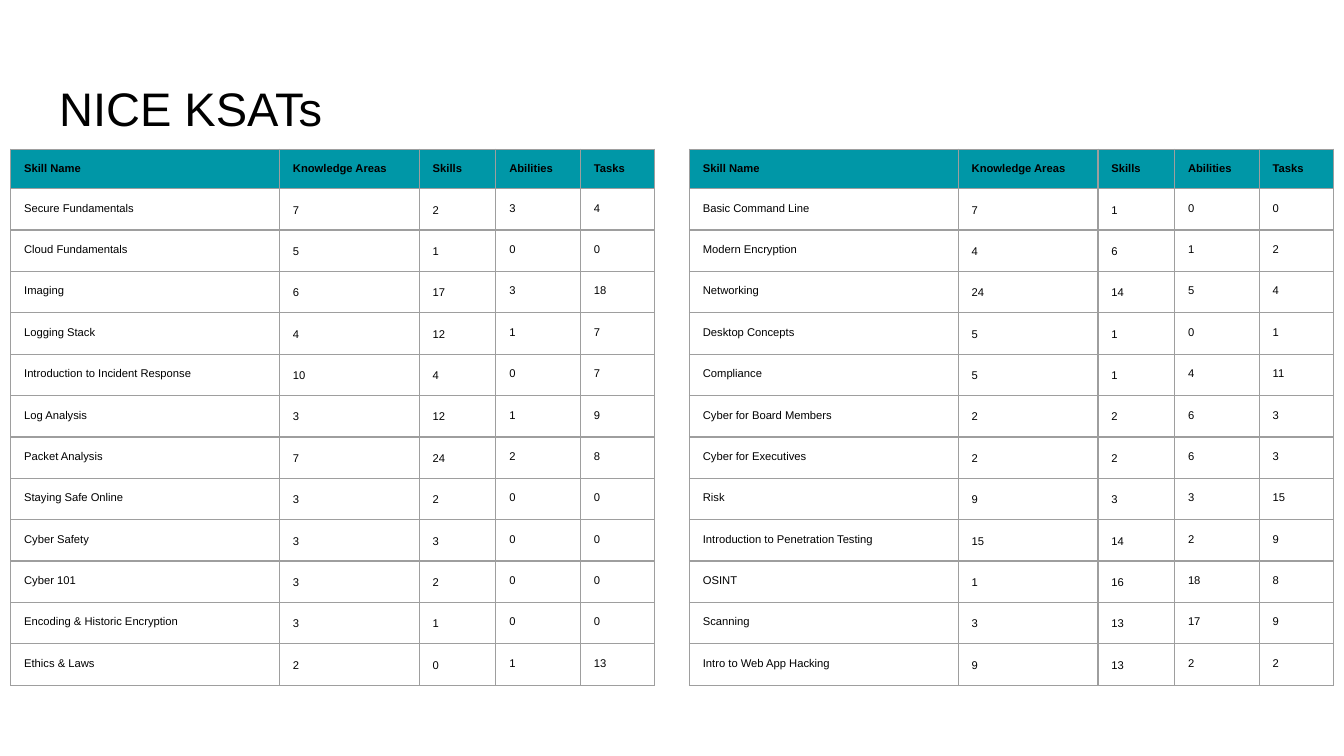
from lxml import etree
from pptx import Presentation
from pptx import util as u
from pptx.dml.color import RGBColor
from pptx.enum import text
from pptx.oxml.ns import qn

COLORS = {"ink": "000000", "header": "0097A7", "border": "9E9E9E"}
FONT = "Arial"

HEADINGS = ["Skill Name", "Knowledge Areas", "Skills", "Abilities", "Tasks"]
COLUMN_WIDTHS = [2, 1.04, 0.57, 0.63, 0.55]
ROW_HEIGHT = 0.23
TABLE_TOP = 1.11

LEFT_SKILLS = [
    ("Secure Fundamentals", 7, 2, 3, 4),
    ("Cloud Fundamentals", 5, 1, 0, 0),
    ("Imaging", 6, 17, 3, 18),
    ("Logging Stack", 4, 12, 1, 7),
    ("Introduction to Incident Response", 10, 4, 0, 7),
    ("Log Analysis", 3, 12, 1, 9),
    ("Packet Analysis", 7, 24, 2, 8),
    ("Staying Safe Online", 3, 2, 0, 0),
    ("Cyber Safety", 3, 3, 0, 0),
    ("Cyber 101", 3, 2, 0, 0),
    ("Encoding & Historic Encryption", 3, 1, 0, 0),
    ("Ethics & Laws", 2, 0, 1, 13),
]
RIGHT_SKILLS = [
    ("Basic Command Line", 7, 1, 0, 0),
    ("Modern Encryption", 4, 6, 1, 2),
    ("Networking", 24, 14, 5, 4),
    ("Desktop Concepts", 5, 1, 0, 1),
    ("Compliance", 5, 1, 4, 11),
    ("Cyber for Board Members", 2, 2, 6, 3),
    ("Cyber for Executives", 2, 2, 6, 3),
    ("Risk", 9, 3, 3, 15),
    ("Introduction to Penetration Testing", 15, 14, 2, 9),
    ("OSINT", 1, 16, 18, 8),
    ("Scanning", 3, 13, 17, 9),
    ("Intro to Web App Hacking", 9, 13, 2, 2),
]


def write(frame, words, size, bold=False):
    """Add one formatted run and return its paragraph."""
    para = frame.paragraphs[0]
    para.alignment = text.PP_ALIGN.LEFT
    span = para.add_run()
    span.text = words
    span.font.name = FONT
    span.font.size = u.Pt(size)
    span.font.bold = bold
    span.font.color.rgb = RGBColor.from_string(COLORS["ink"])
    return para


def add_borders(cell):
    """Draw a thin line on all four sides; lines precede the fill in tcPr."""
    properties = cell._tc.get_or_add_tcPr()
    for position, side in enumerate(("a:lnL", "a:lnR", "a:lnT", "a:lnB")):
        line = etree.Element(qn(side), w=str(u.Pt(0.75)))
        solid = etree.SubElement(line, qn("a:solidFill"))
        etree.SubElement(solid, qn("a:srgbClr"), val=COLORS["border"])
        properties.insert(position, line)


# Deck and page, 16:9
deck = Presentation()
deck.slide_width = u.Inches(10)
deck.slide_height = deck.slide_width * 9 // 16
page = deck.slides.add_slide(deck.slide_layouts[5])

# Title
title = page.shapes.title
title.left, title.top = u.Inches(0.34), u.Inches(0.49)
title.width, title.height = u.Inches(9.32), u.Inches(0.63)
frame = title.text_frame
frame.margin_left = frame.margin_right = u.Inches(0.1)
frame.margin_top = frame.margin_bottom = u.Inches(0.1)
frame.vertical_anchor = text.MSO_ANCHOR.TOP
frame.auto_size = text.MSO_AUTO_SIZE.NONE
write(frame, "NICE KSATs", 25.2)

# Two skill tables, side by side
for left, skills in ((0.08, LEFT_SKILLS), (5.13, RIGHT_SKILLS)):
    rows = [HEADINGS, *skills]
    table = page.shapes.add_table(
        len(rows), len(HEADINGS), u.Inches(left), u.Inches(TABLE_TOP),
        u.Inches(sum(COLUMN_WIDTHS)), u.Inches(ROW_HEIGHT * len(rows))).table
    table.first_row = table.horz_banding = False
    for column, width in zip(table.columns, COLUMN_WIDTHS):
        column.width = u.Inches(width)

    for row_index, values in enumerate(rows):
        table.rows[row_index].height = u.Inches(ROW_HEIGHT)
        is_header = row_index == 0
        for column_index, value in enumerate(values):
            cell = table.cell(row_index, column_index)
            para = write(cell.text_frame, str(value), 6, is_header)
            cell.margin_left = cell.margin_right = u.Inches(0.1)
            cell.margin_top = cell.margin_bottom = u.Inches(0.1)
            if is_header:
                cell.fill.solid()
                cell.fill.fore_color.rgb = RGBColor.from_string(COLORS["header"])
            else:
                cell.fill.background()
                # Knowledge and skill counts have looser lines
                if column_index in (1, 2):
                    para.line_spacing = 1.15
            add_borders(cell)

deck.save("out.pptx")
